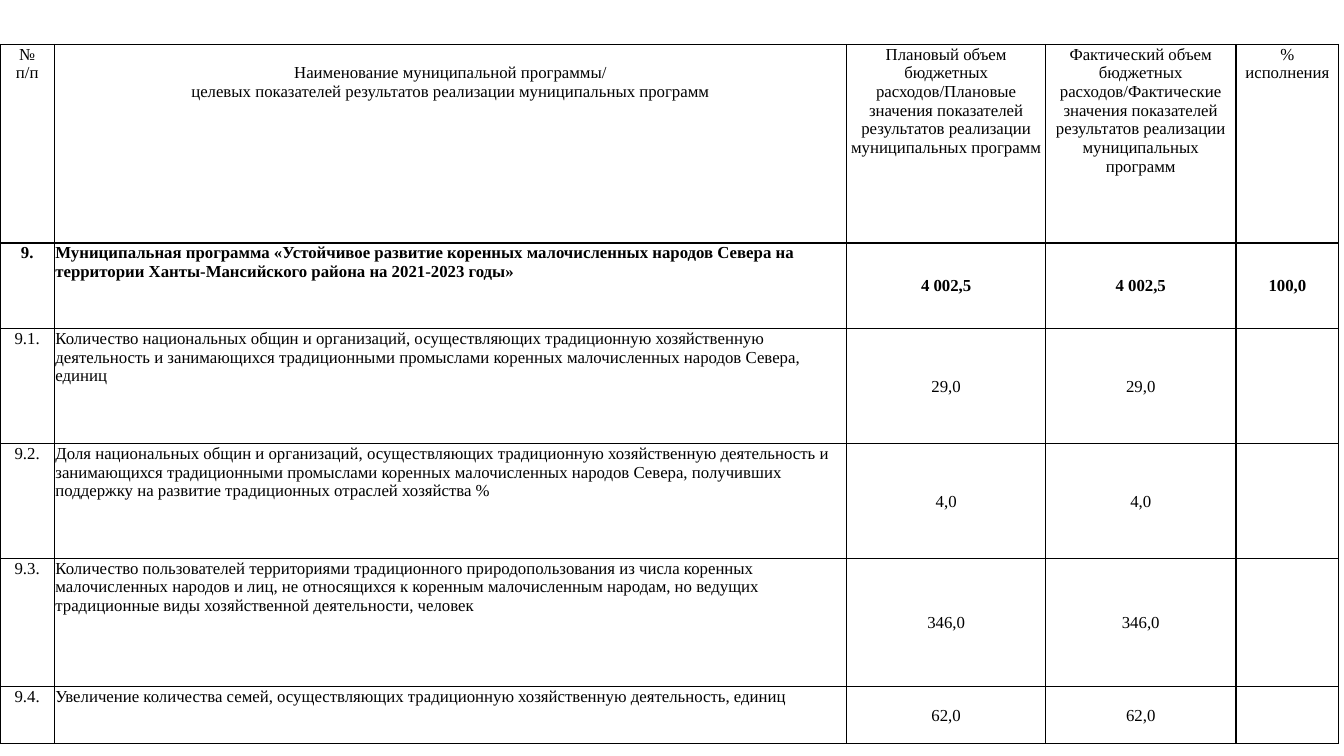
from lxml.etree import SubElement
from pptx import Presentation
from pptx.dml.color import RGBColor
from pptx.enum.text import MSO_ANCHOR, PP_ALIGN
from pptx.oxml.ns import qn
from pptx.util import Emu, Pt

FONT = "Times New Roman"
BLACK = "000000"
COLUMN_WIDTHS = [54, 786, 197, 189, 102]
ROW_HEIGHTS = [197, 85, 114, 114, 127, 57]
HEADER_TITLE_TOP = 19
NAME_COLUMN = 1
PROGRAM_ROW = 1

ROWS = [
    [
        "№\vп/п",
        "Наименование муниципальной программы/\n"
        "целевых показателей результатов реализации муниципальных программ",
        "Плановый объем бюджетных расходов/Плановые значения показателей "
        "результатов реализации муниципальных программ",
        "Фактический объем бюджетных расходов/Фактические значения показателей "
        "результатов реализации муниципальных программ",
        "% исполнения",
    ],
    [
        "9.",
        "Муниципальная программа «Устойчивое развитие коренных малочисленных "
        "народов Севера на территории Ханты-Мансийского района на 2021-2023 годы»",
        "4 002,5", "4 002,5", "100,0",
    ],
    [
        "9.1.",
        "Количество национальных общин и организаций, осуществляющих "
        "традиционную хозяйственную деятельность и занимающихся традиционными "
        "промыслами коренных малочисленных народов Севера, единиц",
        "29,0", "29,0", "",
    ],
    [
        "9.2.",
        "Доля национальных общин и организаций, осуществляющих традиционную "
        "хозяйственную деятельность и занимающихся традиционными промыслами "
        "коренных малочисленных народов Севера, получивших поддержку на развитие "
        "традиционных отраслей хозяйства %",
        "4,0", "4,0", "",
    ],
    [
        "9.3.",
        "Количество пользователей территориями традиционного природопользования "
        "из числа коренных малочисленных народов и лиц, не относящихся к коренным "
        "малочисленным народам, но ведущих традиционные виды хозяйственной "
        "деятельности, человек",
        "346,0", "346,0", "",
    ],
    [
        "9.4.",
        "Увеличение количества семей, осуществляющих традиционную хозяйственную "
        "деятельность, единиц",
        "62,0", "62,0", "",
    ],
]


def px(length):
    return Emu(length * 9144)


def color(value):
    return RGBColor.from_string(value)


def add_borders(cell):
    properties = cell._tc.get_or_add_tcPr()
    for side in ("lnL", "lnR", "lnT", "lnB"):
        line = SubElement(properties, qn(f"a:{side}"), w=str(Pt(1)))
        fill = SubElement(line, qn("a:solidFill"))
        SubElement(fill, qn("a:srgbClr"), val=BLACK)


def write_cell(cell, text, alignment, anchor, bold, top):
    add_borders(cell)
    cell.fill.background()
    cell.margin_left = cell.margin_right = px(1)
    cell.margin_top, cell.margin_bottom = px(top), px(0)
    cell.vertical_anchor = anchor
    cell.text_frame.text = text
    for paragraph in cell.text_frame.paragraphs:
        paragraph.alignment = alignment
        paragraph.font.size = Pt(12)
        for run in paragraph.runs:
            run.font.name = FONT
            run.font.size = Pt(12)
            run.font.bold = bold
            run.font.color.rgb = color(BLACK)


def add_program_table(slide):
    frame = slide.shapes.add_table(
        len(ROW_HEIGHTS), len(COLUMN_WIDTHS),
        px(0), px(44), px(sum(COLUMN_WIDTHS)), px(sum(ROW_HEIGHTS)),
    )
    table = frame.table
    table.horz_banding = False
    for column, width in zip(table.columns, COLUMN_WIDTHS):
        column.width = px(width)
    for row, height in zip(table.rows, ROW_HEIGHTS):
        row.height = px(height)
    for row_index, texts in enumerate(ROWS):
        header = row_index == 0
        for column_index, text in enumerate(texts):
            name = column_index == NAME_COLUMN
            value = column_index > NAME_COLUMN and not header
            write_cell(
                table.cell(row_index, column_index),
                text,
                PP_ALIGN.LEFT if name and not header else PP_ALIGN.CENTER,
                MSO_ANCHOR.MIDDLE if value else MSO_ANCHOR.TOP,
                row_index == PROGRAM_ROW,
                HEADER_TITLE_TOP if name and header else 1,
            )


def main():
    presentation = Presentation()
    presentation.slide_width = px(1333)
    presentation.slide_height = px(750)
    slide = presentation.slides.add_slide(presentation.slide_layouts[6])
    add_program_table(slide)
    presentation.save("out.pptx")


if __name__ == "__main__":
    main()
